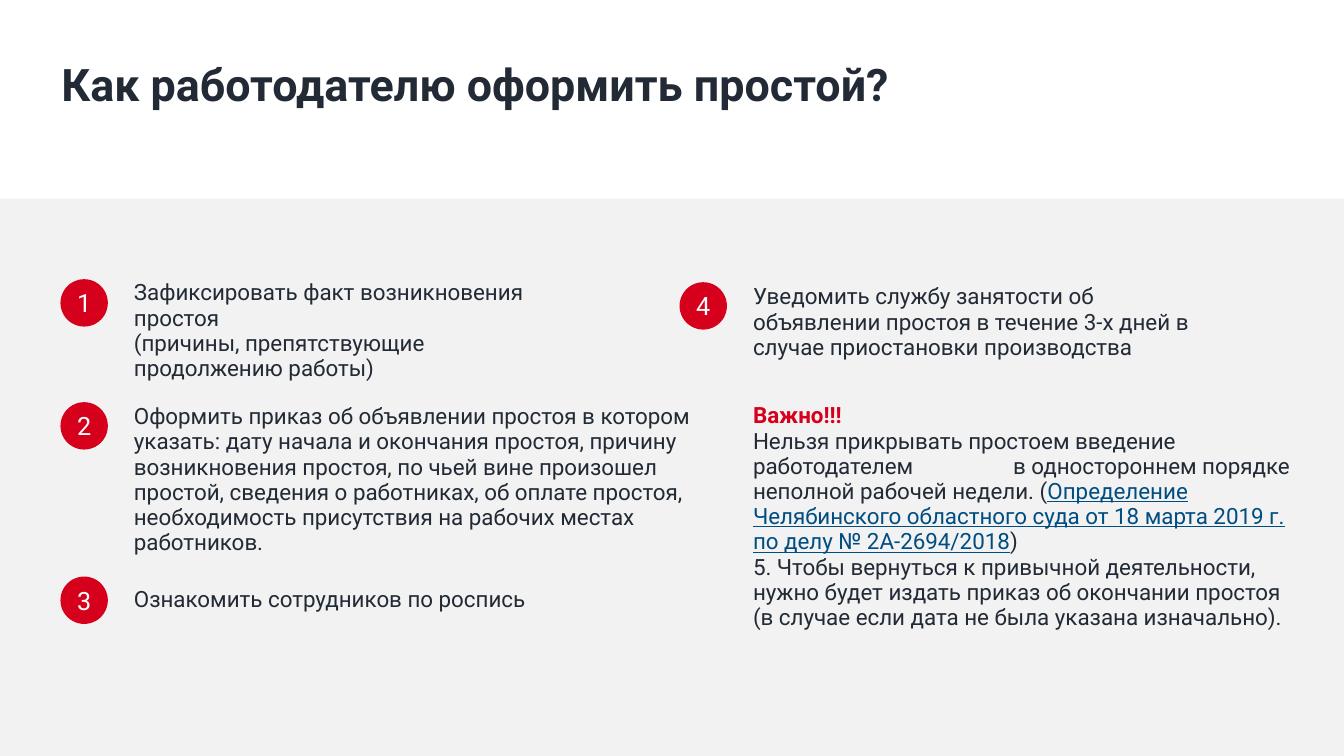
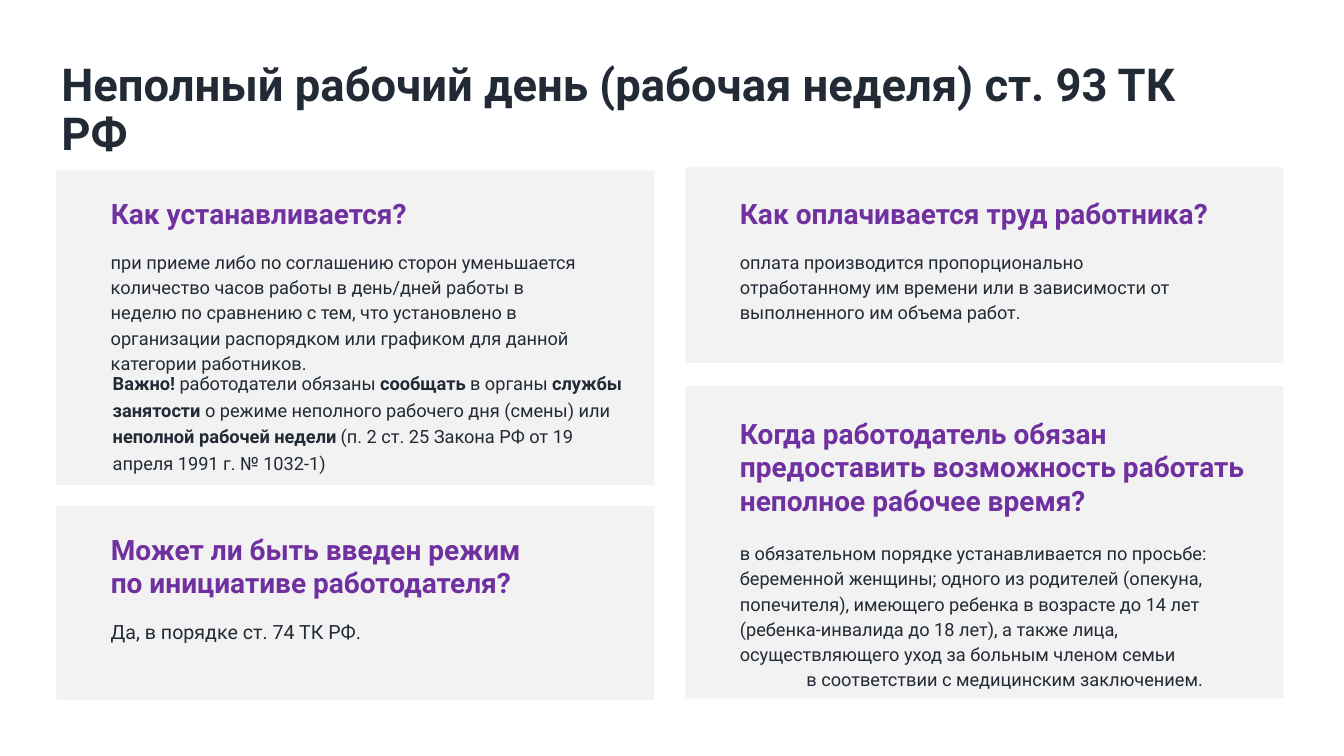
from pptx import Presentation
from pptx.dml.color import RGBColor
from pptx.enum.shapes import MSO_SHAPE as Preset
from pptx.enum.text import MSO_ANCHOR as Anchor, PP_ALIGN as Align
from pptx.oxml.ns import qn
from pptx.util import Inches, Pt
from lxml import etree

WHITE = RGBColor(0xFF, 0xFF, 0xFF)
GREY = RGBColor(0xF2, 0xF2, 0xF2)
DARK = RGBColor(0x22, 0x2A, 0x35)
RED = RGBColor(0xD7, 0x00, 0x1C)
BLUE = RGBColor(0x00, 0x4D, 0x81)
PURPLE = RGBColor(0x70, 0x30, 0xA0)
FONT = "Roboto"

BOLD = {"bold": True}
ALERT = {"bold": True, "color": RED}
REFERENCE = {"underline": True, "color": BLUE}


class Deck:
    """Shared style plus the slide being filled."""

    def __init__(self):
        self.prs = Presentation()
        self.prs.slide_width = Inches(13.33)
        self.prs.slide_height = Inches(7.5)
        self.slide = None

    def new_slide(self):
        self.slide = self.prs.slides.add_slide(self.prs.slide_layouts[6])

    def title(self, text, size=32):
        self.text(0.51, 0.57, 11.98, 0.58, [text], size, leading=0.9, bold=True)

    def panel(self, x, y, w, h, preset=Preset.RECTANGLE, fill=GREY):
        shape = self.slide.shapes.add_shape(
            preset, Inches(x), Inches(y), Inches(w), Inches(h))
        shape.shadow.inherit = False
        shape.fill.solid()
        shape.fill.fore_color.rgb = fill
        shape.line.fill.background()
        return shape

    def badge(self, x, y, number):
        circle = self.panel(x, y, 0.47, 0.47, Preset.OVAL, RED)
        frame = circle.text_frame
        frame.vertical_anchor = Anchor.MIDDLE
        for side in ("left", "right", "top", "bottom"):
            setattr(frame, f"margin_{side}", 0)
        paragraph = frame.paragraphs[0]
        paragraph.alignment = Align.CENTER
        self.run(paragraph, str(number), size=Pt(18), color=WHITE)

    def run(self, paragraph, text, color=DARK, **formats):
        for index, line in enumerate(text.split("\v")):
            if index:
                paragraph.add_line_break()
            run = paragraph.add_run()
            run.text = line
            for key, value in {"name": FONT, **formats}.items():
                setattr(run.font, key, value)
            run.font.color.rgb = color

    def text(self, x, y, w, h, paragraphs, size, leading=None, tab=None, **base):
        """A paragraph is a string or a list of (text, formats) runs."""
        box = self.slide.shapes.add_textbox(
            Inches(x), Inches(y), Inches(w), Inches(h))
        frame = box.text_frame
        frame.word_wrap = True
        for index, content in enumerate(paragraphs):
            paragraph = frame.add_paragraph() if index else frame.paragraphs[0]
            paragraph.line_spacing = leading
            if tab:
                self.tab_stop(paragraph, tab)
            runs = [(content, {})] if isinstance(content, str) else content
            for words, formats in runs:
                self.run(paragraph, words, **{"size": Pt(size), **base, **formats})

    def tab_stop(self, paragraph, position):
        stops = etree.SubElement(paragraph._p.get_or_add_pPr(), qn("a:tabLst"))
        etree.SubElement(stops, qn("a:tab"), pos=str(Inches(position)), algn="l")

    def step(self, x, badge_y, text_y, w, h, number, paragraphs):
        self.badge(x, badge_y, number)
        self.text(x + 0.63, text_y, w, h, paragraphs, 16, Pt(18))

    def card(self, x, y, h, heading_y, heading, body_y, body_h, body,
             size=13, body_w=4.94, tab=None):
        self.panel(x, y, 5.93, h)
        inner = x + 0.44
        self.text(inner, heading_y, 5.31, 0.11 + 0.33 * len(heading),
                  heading, 20, color=PURPLE, bold=True)
        self.text(inner, body_y, body_w, body_h, [body], size, Pt(18), tab)


def downtime_slide(deck):
    deck.new_slide()
    deck.panel(0, 1.97, 13.33, 5.53)
    deck.title("Как работодателю оформить простой?")

    # Numbered steps
    left, right = 0.6, 6.74
    deck.step(left, 2.77, 2.73, 4.61, 1.1, 1, [
        "Зафиксировать факт возникновения простоя",
        "(причины, препятствующие продолжению работы)"])
    deck.step(left, 3.99, 3.96, 5.83, 1.6, 2, [
        "Оформить приказ об объявлении простоя в котором",
        "указать: дату начала и окончания простоя, причину",
        "возникновения простоя, по чьей вине произошел",
        "простой, сведения о работниках, об оплате простоя, "
        "необходимость присутствия на рабочих местах работников."])
    deck.step(left, 5.72, 5.77, 4.81, 0.36, 3, [
        "Ознакомить сотрудников по роспись"])
    deck.step(right, 2.8, 2.77, 4.81, 0.86, 4, [
        "Уведомить службу занятости об объявлении простоя в течение "
        "3-х дней в случае приостановки производства"])

    # Warning and closing step
    deck.text(7.37, 3.95, 5.68, 2.35, [
        [("Важно!!!", ALERT)],
        [("Нельзя прикрывать простоем введение работодателем\tв одностороннем "
          "порядке неполной рабочей недели. (", {}),
         ("Определение Челябинского областного суда от 18 марта 2019 г. "
          "по делу № 2А-2694/2018", REFERENCE),
         (")", {})],
        "5. Чтобы вернуться к привычной деятельности, нужно будет издать приказ "
        "об окончании простоя (в случае если дата не была указана изначально).",
    ], 16, Pt(18), tab=2.58)


def part_time_slide(deck):
    deck.new_slide()
    deck.title("Неполный рабочий день (рабочая неделя) ст. 93 ТК РФ", 32.4)
    left, right = 0.56, 6.8

    # Left column
    deck.card(
        left, 1.69, 3.12, 1.9, ["Как устанавливается?"], 2.41, 1.35,
        "при приеме либо по соглашению сторон уменьшается количество часов "
        "работы в день/дней работы в неделю по сравнению с тем, что установлено "
        "в организации распорядком или графиком для данной категории работников.")
    deck.text(1.02, 3.6, 5.26, 1.16, [[
        ("Важно! ", BOLD),
        ("работодатели обязаны ", {}),
        ("сообщать ", BOLD),
        ("в органы ", {}),
        ("службы занятости ", BOLD),
        ("о режиме неполного рабочего дня (смены) или ", {}),
        ("неполной рабочей недели ", BOLD),
        ("(п. 2 ст. 25 Закона РФ от 19 апреля 1991 г. № 1032-1)", {}),
    ]], 13, Pt(19))
    deck.card(
        left, 5.02, 1.92, 5.23,
        ["Может ли быть введен режим", "по инициативе работодателя?"],
        6.08, 0.65, "Да, в порядке ст. 74 ТК РФ.", size=14)

    # Right column
    deck.card(
        right, 1.66, 1.94, 1.9, ["Как оплачивается труд работника?"], 2.41, 0.85,
        "оплата производится пропорционально отработанному им времени "
        "или в зависимости от выполненного им объема работ.")
    deck.card(
        right, 3.83, 3.1, 4.08,
        ["Когда работодатель обязан предоставить возможность работать "
         "неполное рабочее время?"], 5.3, 1.6,
        "в обязательном порядке устанавливается по просьбе: беременной женщины; "
        "одного из родителей (опекуна, попечителя), имеющего ребенка в возрасте "
        "до 14 лет (ребенка-инвалида до 18 лет), а также лица, осуществляющего "
        "уход за больным членом семьи\v\tв соответствии с медицинским заключением.",
        body_w=5.23, tab=0.66)


def main():
    deck = Deck()
    downtime_slide(deck)
    part_time_slide(deck)
    deck.prs.save("out.pptx")


if __name__ == "__main__":
    main()
